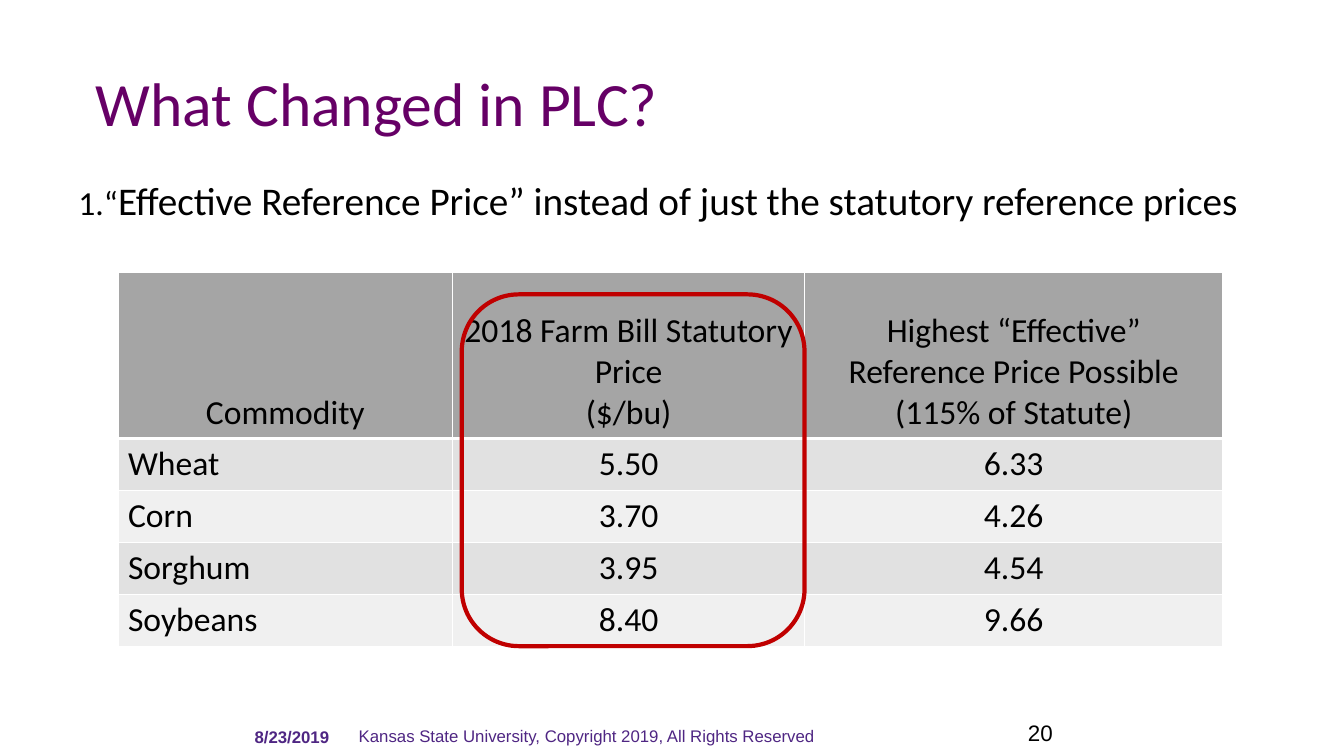
from lxml import etree
from pptx import Presentation
from pptx.dml.color import RGBColor
from pptx.enum.shapes import MSO_SHAPE
from pptx.enum.text import MSO_ANCHOR, PP_ALIGN
from pptx.oxml.ns import qn
from pptx.util import Inches, Pt

LEFT, CENTER, RIGHT = PP_ALIGN.LEFT, PP_ALIGN.CENTER, PP_ALIGN.RIGHT
TOP, MIDDLE, BOTTOM = MSO_ANCHOR.TOP, MSO_ANCHOR.MIDDLE, MSO_ANCHOR.BOTTOM
ROUNDED = MSO_SHAPE.ROUNDED_RECTANGLE

BLACK = RGBColor(0x00, 0x00, 0x00)
WHITE = RGBColor(0xFF, 0xFF, 0xFF)
PLUM = RGBColor(0x66, 0x00, 0x66)
PURPLE = RGBColor(0x4F, 0x26, 0x83)
RED = RGBColor(0xC0, 0x00, 0x00)
HEADER_GRAY = RGBColor(0xA5, 0xA5, 0xA5)
BAND_GRAYS = [RGBColor(0xE1, 0xE1, 0xE1), RGBColor(0xF0, 0xF0, 0xF0)]

TITLE = "What Changed in PLC?"
CHANGE_RUNS = [
    ("“", 24),
    ("Effective Reference Price” instead of just the statutory reference prices", 28),
]
PRICES = [
    ("Commodity",
     "2018 Farm Bill Statutory Price\n($/bu)",
     "Highest “Effective” Reference Price Possible\n(115% of Statute)"),
    ("Wheat", "5.50", "6.33"),
    ("Corn", "3.70", "4.26"),
    ("Sorghum", "3.95", "4.54"),
    ("Soybeans", "8.40", "9.66"),
]
COLUMN_WIDTHS = [3.32, 3.49, 4.15]
HEADER_HEIGHT, ROW_HEIGHT = 1.65, 0.515
FOOTERS = [
    ("20", (9.96, 7.04, 0.58, 0.41), 16, BLACK, False, RIGHT, BOTTOM),
    ("Kansas State University, Copyright 2019, All Rights Reserved",
     (3.46, 7.15, 6.83, 0.3), 12, PURPLE, False, LEFT, MIDDLE),
    ("8/23/2019", (2.3, 7.16, 1.19, 0.35), 12, PURPLE, True, CENTER, TOP),
]


def add_run(paragraph, text, size, color=BLACK, font="Calibri", bold=False):
    run = paragraph.add_run()
    run.text = text
    run.font.name = font
    run.font.size = Pt(size)
    run.font.bold = bold
    run.font.color.rgb = color


def add_box(slide, place, anchor, align=LEFT):
    box = slide.shapes.add_textbox(*map(Inches, place))
    box.text_frame.word_wrap = True
    box.text_frame.vertical_anchor = anchor
    paragraph = box.text_frame.paragraphs[0]
    paragraph.alignment = align
    return box, paragraph


def set_borders(cell, is_header):
    properties = cell._tc.get_or_add_tcPr()
    widths = {"a:lnL": 1, "a:lnR": 1, "a:lnT": 1, "a:lnB": 1}
    if is_header:
        widths["a:lnB"] = 3
    for side, width in widths.items():
        line = etree.SubElement(properties, qn(side), w=str(Pt(width)))
        fill = etree.SubElement(line, qn("a:solidFill"))
        etree.SubElement(fill, qn("a:srgbClr"), val=str(WHITE))


def add_prices(slide):
    heights = [HEADER_HEIGHT] + [ROW_HEIGHT] * (len(PRICES) - 1)
    table = slide.shapes.add_table(
        len(PRICES), len(COLUMN_WIDTHS), Inches(1.17), Inches(2.7),
        Inches(sum(COLUMN_WIDTHS)), Inches(sum(heights))).table
    for column, width in zip(table.columns, COLUMN_WIDTHS):
        column.width = Inches(width)
    for r, (entries, height) in enumerate(zip(PRICES, heights)):
        is_header = r == 0
        table.rows[r].height = Inches(height)
        for c, entry in enumerate(entries):
            cell = table.cell(r, c)
            set_borders(cell, is_header)
            cell.fill.solid()
            cell.fill.fore_color.rgb = HEADER_GRAY if is_header else BAND_GRAYS[(r - 1) % 2]
            cell.vertical_anchor = BOTTOM if is_header else TOP
            for i, line in enumerate(entry.split("\n")):
                frame = cell.text_frame
                paragraph = frame.add_paragraph() if i else frame.paragraphs[0]
                paragraph.alignment = CENTER if is_header or c else LEFT
                add_run(paragraph, line, 24)


def main():
    prs = Presentation()
    prs.slide_width, prs.slide_height = Inches(13.33), Inches(7.5)
    slide = prs.slides.add_slide(prs.slide_layouts[6])

    for text, place, size, color, bold, align, anchor in FOOTERS:
        _, footer = add_box(slide, place, anchor, align)
        add_run(footer, text, size, color, "Arial", bold)

    title_box, title = add_box(slide, (0.85, 0.67, 11.82, 0.78), MIDDLE)
    title_box.fill.solid()
    title_box.fill.fore_color.rgb = WHITE
    title.line_spacing = 0.9
    add_run(title, TITLE, 44, PLUM)

    _, change = add_box(slide, (0.68, 1.75, 11.99, 0.8), TOP)
    change.line_spacing = 0.9
    numbering = change._p.get_or_add_pPr()
    numbering.set("marL", str(Inches(0.25)))
    numbering.set("indent", str(Inches(-0.25)))
    etree.SubElement(numbering, qn("a:buFont"), typeface="+mj-lt")
    etree.SubElement(numbering, qn("a:buAutoNum"), type="arabicPeriod")
    for text, size in CHANGE_RUNS:
        add_run(change, text, size)

    add_prices(slide)

    statutory_outline = slide.shapes.add_shape(
        ROUNDED, Inches(4.58), Inches(2.92), Inches(3.4), Inches(3.49))
    statutory_outline.shadow.inherit = False
    statutory_outline.fill.background()
    statutory_outline.line.color.rgb = RED
    statutory_outline.line.width = Pt(3)

    prs.save("out.pptx")


if __name__ == "__main__":
    main()
